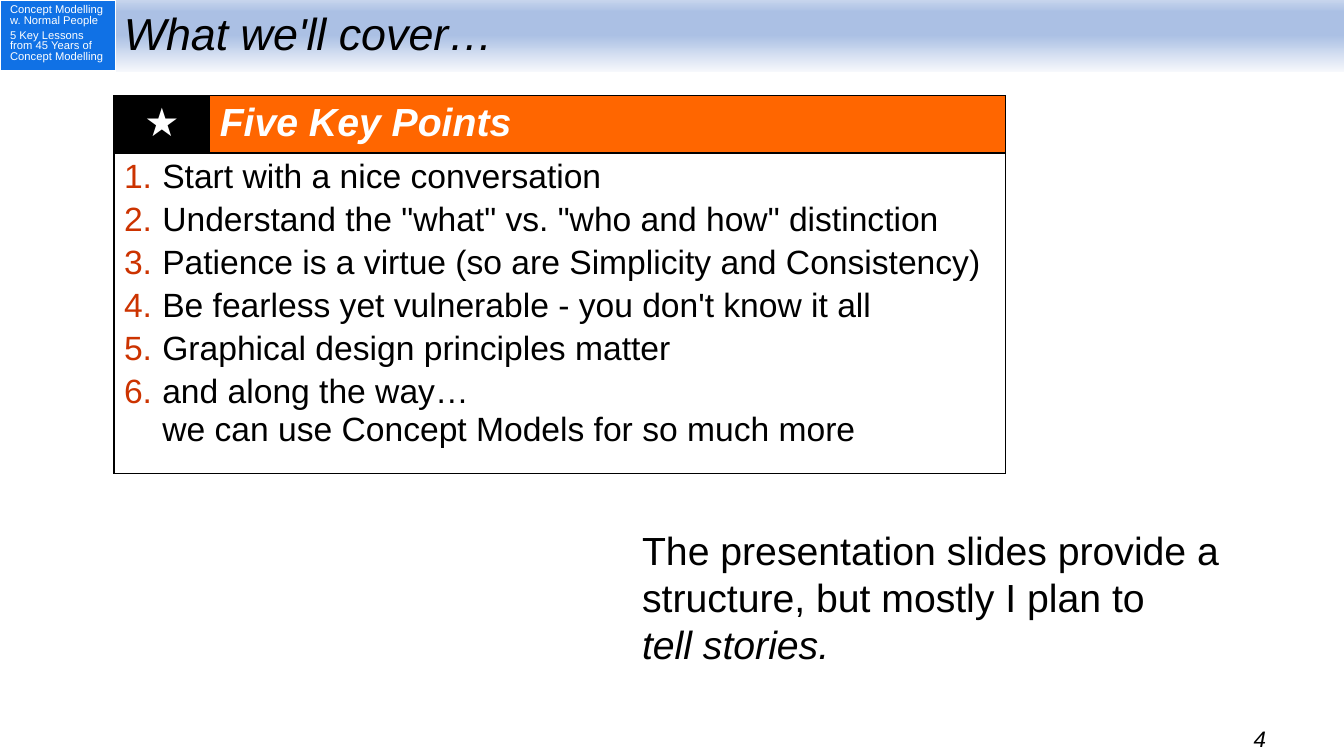
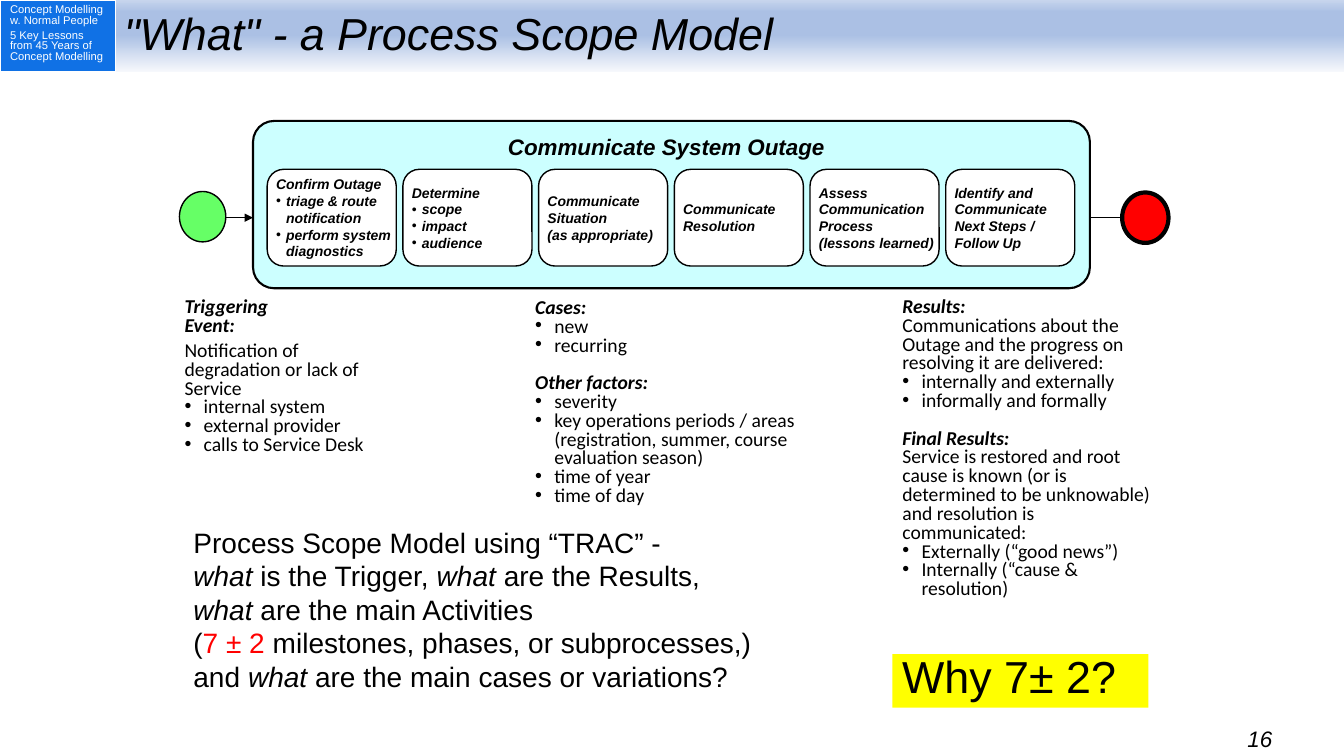
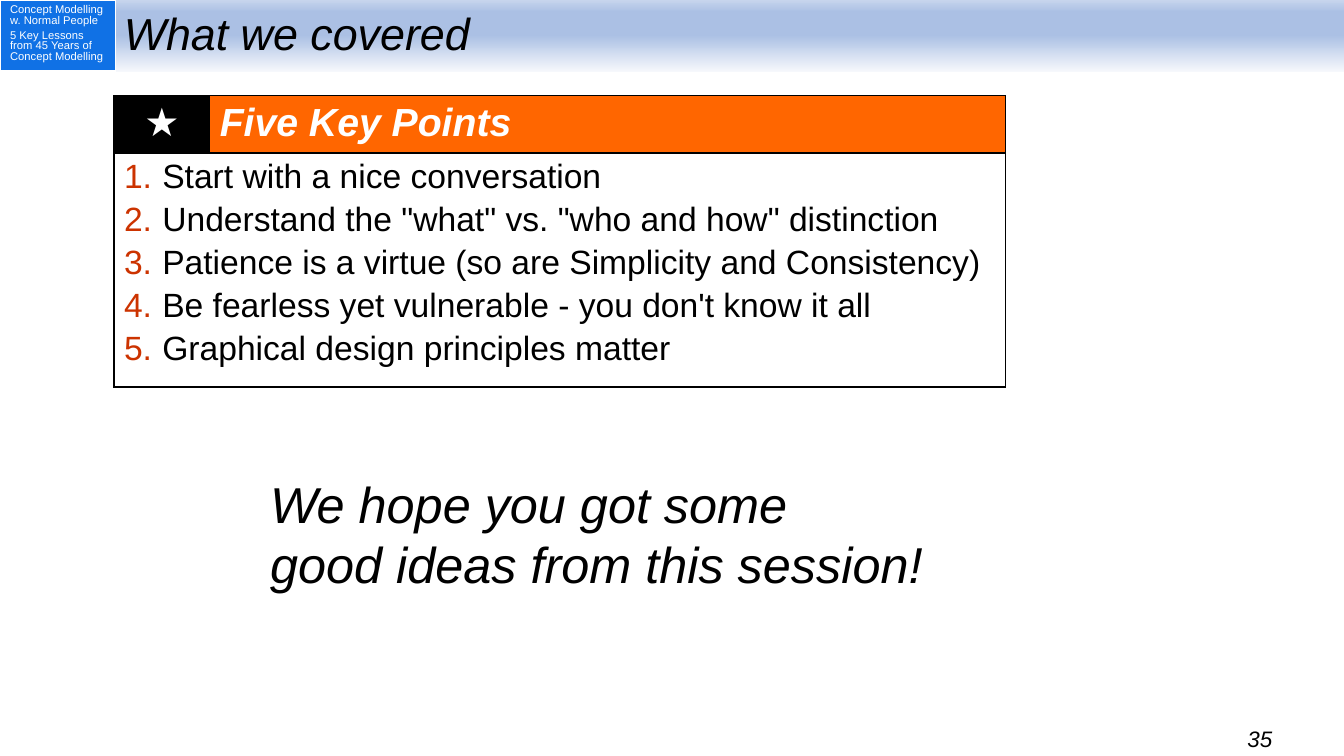
"""Build three slides on lessons from concept modelling."""
from dataclasses import dataclass, field, replace

from lxml.etree import SubElement
from pptx import Presentation
from pptx.dml.color import RGBColor
from pptx.enum.shapes import MSO_CONNECTOR as Connector, MSO_SHAPE as Preset
from pptx.enum.text import MSO_ANCHOR as Anchor, PP_ALIGN as Align
from pptx.oxml.ns import qn
from pptx.util import Inches, Pt


@dataclass(frozen=True)
class Style:
    """Describe how a run of text looks."""
    size: float
    color: str = "000000"
    font: str = "Arial"
    bold: bool = False
    italic: bool = False


@dataclass(frozen=True)
class Theme:
    """Hold the colours and type styles of the deck."""
    black: str = "000000"
    white: str = "FFFFFF"
    tag: str = "1071E5"
    orange: str = "FF6600"
    number: str = "CC3300"
    process: str = "CCFFFF"
    start: str = "66FF66"
    end: str = "FF0000"
    highlight: str = "FFFF00"
    band: tuple = ((0, "F6F8FC"), (51, "ABC0E4"), (83, "ABC0E4"), (100, "C7D5ED"))
    tag_text: Style = Style(8, "FFFFFF")
    title: Style = Style(32, italic=True)
    page: Style = Style(16, italic=True)
    star: Style = Style(28, "FFFFFF")
    points_title: Style = Style(28, "FFFFFF", bold=True, italic=True)
    point: Style = Style(24)
    remark: Style = Style(28)
    closing: Style = Style(36, italic=True)
    process_title: Style = Style(16, bold=True, italic=True)
    activity: Style = Style(10, bold=True, italic=True)
    heading: Style = Style(14, font="Calibri", bold=True, italic=True)
    detail: Style = Style(14, font="Calibri")
    summary: Style = Style(20)
    question: Style = Style(32)


@dataclass(frozen=True)
class Para:
    """Describe one paragraph as a list of text and style pairs."""
    runs: list
    before: float = 0
    spacing: float = None
    align: Align = Align.LEFT
    hang: float = 0
    marker: tuple = field(default=())
    marker_color: str = "000000"


THEME = Theme()
BOX_INSETS = (0.1, 0.05, 0.1, 0.05)
TIGHT_INSETS = (0.04, 0.04, 0.04, 0.04)
ACTIVITY_INSETS = (0.04, 0.04, 0, 0.04)
POINTS = [
    "Start with a nice conversation",
    'Understand the "what" vs. "who and how" distinction',
    "Patience is a virtue (so are Simplicity and Consistency)",
    "Be fearless yet vulnerable - you don't know it all",
    "Graphical design principles matter",
]
EXTRA_POINT = "and along the way…\nwe can use Concept Models for so much more"
ACTIVITIES = [
    (["Confirm Outage"], ["triage & route notification", "perform system diagnostics"]),
    (["Determine"], ["scope", "impact", "audience"]),
    (["Communicate Situation", "(as appropriate)"], []),
    (["Communicate Resolution"], []),
    (["Assess Communication Process", "(lessons learned)"], []),
    (["Identify and Communicate Next Steps / Follow Up"], []),
]


def rgb(color):
    """Turn a hex string into a colour."""
    return RGBColor.from_string(color)


def inches(values):
    """Convert several numbers to lengths."""
    return [Inches(value) for value in values]


def add_text_run(paragraph, text, style):
    """Add text in one style, with line breaks at newlines."""
    for index, line in enumerate(text.split("\n")):
        if index:
            paragraph.add_line_break()
        if line:
            run = paragraph.add_run()
            run.text = line
            run.font.size = Pt(style.size)
            run.font.name = style.font
            run.font.bold = style.bold
            run.font.italic = style.italic
            run.font.color.rgb = rgb(style.color)


def set_marker(paragraph, para):
    """Give a paragraph its hanging bullet or number."""
    props = paragraph._p.get_or_add_pPr()
    props.set("marL", str(Inches(para.hang)))
    props.set("indent", str(-Inches(para.hang)))
    SubElement(SubElement(props, qn("a:buClr")), qn("a:srgbClr"), val=para.marker_color)
    SubElement(props, qn("a:buFont"), typeface="Arial")
    tag, attribute, value = para.marker
    SubElement(props, qn(tag)).set(attribute, value)


def write(frame, paras):
    """Fill a text frame with paragraphs."""
    for index, para in enumerate(paras):
        paragraph = frame.add_paragraph() if index else frame.paragraphs[0]
        if para.marker:
            set_marker(paragraph, para)
        paragraph.alignment = para.align
        paragraph.space_before = Pt(para.before if index else 0)
        if para.spacing:
            paragraph.line_spacing = para.spacing
        for text, style in para.runs:
            add_text_run(paragraph, text, style)


def set_frame(frame, paras, insets, anchor):
    """Set wrapping, margins and anchor, then write the text."""
    frame.word_wrap = True
    frame.vertical_anchor = anchor
    (frame.margin_left, frame.margin_top,
     frame.margin_right, frame.margin_bottom) = inches(insets)
    write(frame, paras)


def add_text(slide, place, paras, insets=BOX_INSETS, anchor=Anchor.TOP):
    """Add a text box."""
    set_frame(slide.shapes.add_textbox(*inches(place)).text_frame, paras, insets, anchor)


def add_block(slide, preset, place, fill=None, line_width=0, corner=None,
              paras=(), insets=BOX_INSETS, anchor=Anchor.TOP):
    """Add a preset shape with an optional outline and text."""
    block = slide.shapes.add_shape(preset, *inches(place))
    block.shadow.inherit = False
    if fill:
        block.fill.solid()
        block.fill.fore_color.rgb = rgb(fill)
    if line_width:
        block.line.color.rgb = rgb(THEME.black)
        block.line.width = Pt(line_width)
    else:
        block.line.fill.background()
    if corner:
        block.adjustments[0] = corner
    if paras:
        set_frame(block.text_frame, paras, insets, anchor)
    return block


def add_arrow(slide, start_x, end_x, y):
    """Add a horizontal arrow."""
    arrow = slide.shapes.add_connector(Connector.STRAIGHT, *inches((start_x, y, end_x, y)))
    arrow.line.color.rgb = rgb(THEME.black)
    arrow.line.width = Pt(1)
    SubElement(arrow.line._get_or_add_ln(), qn("a:tailEnd"), type="triangle")
    SubElement(arrow._element.spPr, qn("a:effectLst"))


def add_grid(slide, left, top, widths, heights):
    """Add a table without banding."""
    frame = slide.shapes.add_table(len(heights), len(widths),
                                   *inches((left, top, sum(widths), sum(heights))))
    table = frame.table
    table.first_row = table.horz_banding = False
    for column, width in zip(table.columns, widths):
        column.width = Inches(width)
    for row, height in zip(table.rows, heights):
        row.height = Inches(height)
    return table


def set_border(cell):
    """Draw a thin black border round a cell."""
    props = cell._tc.get_or_add_tcPr()
    for index, side in enumerate(("a:lnL", "a:lnR", "a:lnT", "a:lnB")):
        edge = props.makeelement(qn(side), {"w": str(Pt(1))})
        SubElement(SubElement(edge, qn("a:solidFill")), qn("a:srgbClr"), val=THEME.black)
        props.insert(index, edge)


def fill_cell(cell, fill, paras):
    """Give a cell its fill and text."""
    cell.fill.solid()
    cell.fill.fore_color.rgb = rgb(fill)
    write(cell.text_frame, paras)


def add_band(slide):
    """Add the gradient band behind the title."""
    band = add_block(slide, Preset.RECTANGLE, (1.15, 0, 12.18, 0.71))
    band.fill.gradient()
    band.fill.gradient_angle = 90
    stops = band._element.spPr.find(qn("a:gradFill")).find(qn("a:gsLst"))
    for stop in list(stops):
        stops.remove(stop)
    for percent, color in THEME.band:
        stop = SubElement(stops, qn("a:gs"), pos=str(percent * 1000))
        SubElement(stop, qn("a:srgbClr"), val=color)


def add_slide(deck, title, page):
    """Add a slide with the shared tag, band, page number and title."""
    slide = deck.slides.add_slide(deck.slide_layouts[6])
    tag = add_grid(slide, 0, 0, [1.15], [0.7])
    fill_cell(tag.cell(0, 0), THEME.tag, [
        Para([(text, THEME.tag_text)], before=3, spacing=0.85)
        for text in ("Concept Modelling w. Normal People",
                     "5 Key Lessons from 45 Years of\nConcept Modelling")])
    add_band(slide)
    add_block(slide, Preset.RECTANGLE, (11.66, 7.19, 1.67, 0.27), THEME.white,
              paras=[Para([(str(page), THEME.page)], align=Align.CENTER)],
              insets=(0, 0, 0, 0))
    add_text(slide, (1.13, 0, 12.2, 0.71), [Para([(title, THEME.title)], spacing=0.9)],
             anchor=Anchor.MIDDLE)
    return slide


def add_key_points(slide, points, body_height):
    """Add the numbered table of key points."""
    table = add_grid(slide, 1.13, 0.95, [0.95, 7.89], [0.54, body_height])
    body = table.cell(1, 0)
    body.merge(table.cell(1, 1))
    fill_cell(table.cell(0, 0), THEME.black,
              [Para([("★", THEME.star)], align=Align.CENTER)])
    fill_cell(table.cell(0, 1), THEME.orange,
              [Para([("Five Key Points", THEME.points_title)])])
    fill_cell(body, THEME.white, [
        Para([(point, THEME.point)], before=4, hang=0.38, marker_color=THEME.number,
             marker=("a:buAutoNum", "type", "arabicPeriod")) for point in points])
    for cell in table.iter_cells():
        set_border(cell)


def bullets(items, style, hang, spacing=None):
    """Make bulleted paragraphs."""
    return [Para([(item, style)], spacing=spacing, hang=hang,
                 marker=("a:buChar", "char", "•")) for item in items]


def factor(heading, items, text="", before=0, text_before=0):
    """Make a heading with optional text and a bullet list."""
    paras = [Para([(heading, THEME.heading)], before=before, spacing=0.8)]
    if text:
        paras.append(Para([(text, THEME.detail)], before=text_before, spacing=0.8))
    return paras + bullets(items, THEME.detail, 0.19, 0.8)


def add_activities(slide):
    """Add the row of equally spaced activities."""
    left, right, width = 2.65, 10.66, 1.28
    pitch = (right - left - width) / (len(ACTIVITIES) - 1)
    for index, (lines, steps) in enumerate(ACTIVITIES):
        paras = [Para([(line, THEME.activity)]) for line in lines]
        add_block(slide, Preset.ROUNDED_RECTANGLE,
                  (left + index * pitch, 1.68, width, 0.96), THEME.white, 1, 0.17,
                  paras + bullets(steps, THEME.activity, 0.1),
                  ACTIVITY_INSETS, Anchor.MIDDLE)


def add_process(slide):
    """Add the process with its trigger, activities and results."""
    add_block(slide, Preset.ROUNDED_RECTANGLE, (2.51, 1.2, 8.3, 1.66),
              THEME.process, 1.5, 0.125)
    add_text(slide, (4.94, 1.3, 3.44, 0.35),
             [Para([("Communicate System Outage", THEME.process_title)], spacing=0.9)])
    add_arrow(slide, 2.16, 2.51, 2.16)
    add_block(slide, Preset.OVAL, (1.78, 1.9, 0.46, 0.5), THEME.start, 1)
    add_arrow(slide, 10.82, 11.21, 2.16)
    add_block(slide, Preset.OVAL, (11.13, 1.91, 0.46, 0.5), THEME.end, 3)
    add_activities(slide)


def add_factors(slide):
    """Add the trigger, cases and results below the process."""
    add_text(slide, (1.79, 2.92, 1.9, 1.31), factor(
        "Triggering\nEvent:",
        ["internal system", "external provider", "calls to Service Desk"],
        "Notification of degradation or lack of Service", text_before=4.5), TIGHT_INSETS)
    add_text(slide, (8.91, 2.92, 2.59, 2.37), factor(
        "Results:", ["internally and externally", "informally and formally"],
        "Communications about the Outage and the progress on resolving it are delivered:",
    ) + factor(
        "Final Results:", ["Externally (“good news”)", "Internally (“cause & resolution)"],
        "Service is restored and root cause is known (or is determined to be "
        "unknowable) and resolution is communicated:", before=13.5), TIGHT_INSETS)
    add_text(slide, (5.21, 2.92, 2.83, 2.18), factor(
        "Cases:", ["new", "recurring"],
    ) + factor(
        "Other factors:",
        ["severity",
         "key operations periods / areas\n(registration, summer, course evaluation season)",
         "time of year", "time of day"], before=13.5))


def add_summary(slide):
    """Add the explanation of the model and the closing question."""
    plain = THEME.summary
    what = ("what", replace(plain, italic=True))
    add_text(slide, (1.82, 5.16, 7.04, 1.78), [Para([
        ("Process Scope Model using “TRAC” -\n", plain),
        what, (" is the Trigger, ", plain),
        what, (" are the Results,\n", plain),
        what, (" are the main Activities\n(", plain),
        ("7 ± 2", replace(plain, color=THEME.end)),
        (" milestones, phases, or subprocesses,)\nand ", plain),
        what, (" are the main cases or variations?", plain)])])
    add_block(slide, Preset.RECTANGLE, (8.85, 6.49, 2.54, 0.53), THEME.highlight,
              paras=[Para([("Why 7± 2?", THEME.question)], spacing=0.8)])


def main():
    """Build and save the deck."""
    deck = Presentation()
    deck.slide_width, deck.slide_height = inches((13.33, 7.5))

    agenda = add_slide(deck, "What we'll cover…", 4)
    add_key_points(agenda, POINTS + [EXTRA_POINT], 3.03)
    add_text(agenda, (6.27, 5.17, 5.94, 1.59), [Para([
        ("The presentation slides provide a structure, but mostly I plan to\n", THEME.remark),
        ("tell stories.", replace(THEME.remark, italic=True))])])

    scope = add_slide(deck, '"What" - a Process Scope Model', 16)
    add_process(scope)
    add_factors(scope)
    add_summary(scope)

    recap = add_slide(deck, "What we covered", 35)
    add_key_points(recap, POINTS, 2.22)
    add_text(recap, (2.58, 4.64, 6.71, 1.59), [Para([
        ("We hope you got some\ngood ideas from this session!", THEME.closing)])])

    deck.save("out.pptx")


if __name__ == "__main__":
    main()
